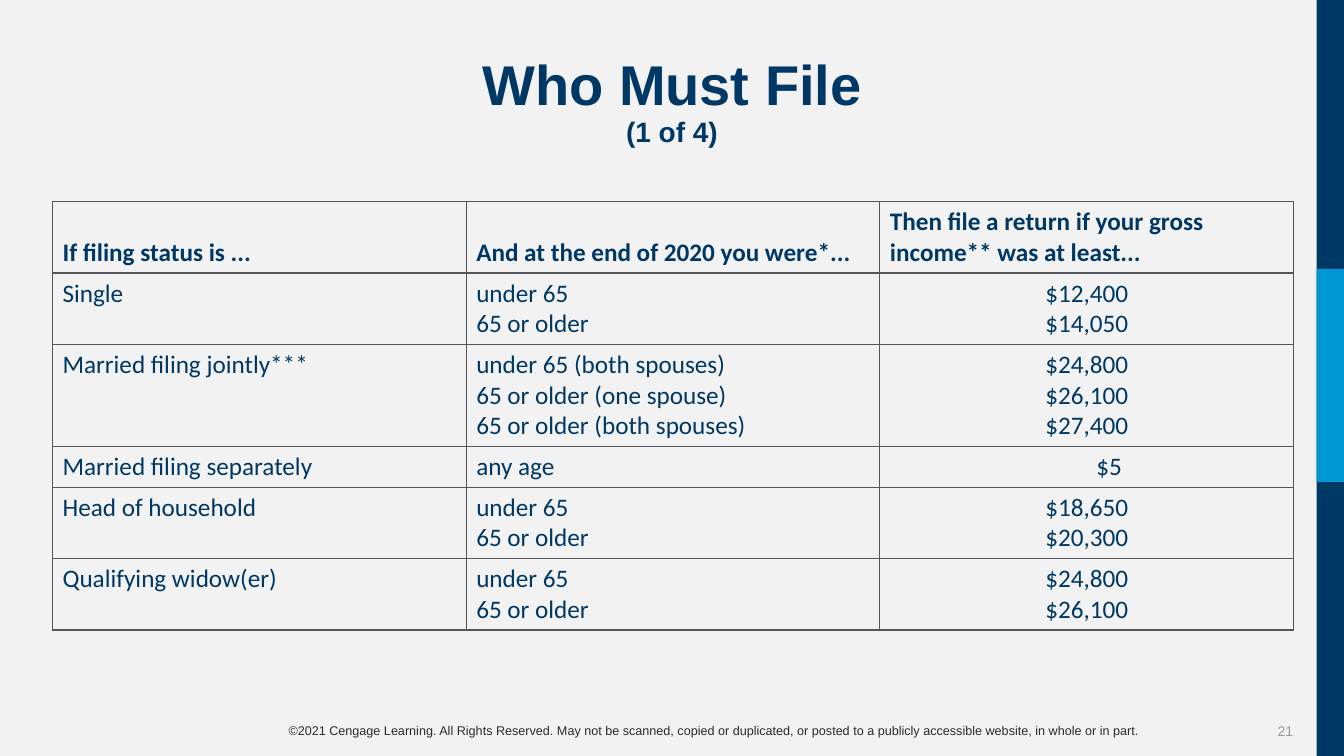
import pptx
import pptx.dml.color
import pptx.enum.shapes
import pptx.enum.text
import pptx.oxml
import pptx.oxml.ns
import pptx.util

RGBColor = pptx.dml.color.RGBColor
ALIGN = pptx.enum.text.PP_ALIGN
ANCHOR = pptx.enum.text.MSO_ANCHOR

NAVY = RGBColor(0x00, 0x38, 0x65)
SKY = RGBColor(0x00, 0x98, 0xD4)
PALE = RGBColor(0xF2, 0xF2, 0xF2)
SLATE = RGBColor(0x53, 0x56, 0x5A)
SILVER = RGBColor(0x96, 0x99, 0x9E)
CHARCOAL = RGBColor(0x2A, 0x2B, 0x2D)

TITLE = "Who Must File"
PART = "(1 of 4)"
COPYRIGHT = (
    "©2021 Cengage Learning. All Rights Reserved. May not be scanned, copied or "
    "duplicated, or posted to a publicly accessible website, in whole or in part."
)
PAGE = "21"
HEADINGS = (
    "If filing status is ...",
    "And at the end of 2020 you were*...",
    "Then file a return if your gross income** was at least...",
)
HEADING_LINES = 2
THRESHOLDS = [
    ("Single", [("under 65", "$12,400"), ("65 or older", "$14,050")]),
    ("Married filing jointly***", [
        ("under 65 (both spouses)", "$24,800"),
        ("65 or older (one spouse)", "$26,100"),
        ("65 or older (both spouses)", "$27,400"),
    ]),
    ("Married filing separately", [("any age", "$5")]),
    ("Head of household", [("under 65", "$18,650"), ("65 or older", "$20,300")]),
    ("Qualifying widow(er)", [("under 65", "$24,800"), ("65 or older", "$26,100")]),
]
INDENTS = {"$5": 43}

# All lengths are px, 96 to the inch
SLIDE_W, SLIDE_H = 1280, 720
BAND_X, BAND_W = 1254, 26
ACCENT_Y, ACCENT_H = 256, 203
TABLE_X, TABLE_Y = 50, 192
COLUMN_W = 394
LINE_H, ROW_PADDING = 29, 10


def px(length):
    return pptx.util.Emu(length * 9525)


def add_run(paragraph, words, font, size, color, bold=False):
    run = paragraph.add_run()
    run.text = words
    run.font.name = font
    run.font.size = pptx.util.Pt(size)
    run.font.color.rgb = color
    run.font.bold = bold


def add_bar(slide, top, height, color):
    bar = slide.shapes.add_shape(
        pptx.enum.shapes.MSO_SHAPE.RECTANGLE, px(BAND_X), px(top), px(BAND_W), px(height))
    bar.shadow.inherit = False
    bar.fill.solid()
    bar.fill.fore_color.rgb = color
    bar.line.fill.background()


def add_note(slide, box, words, size, color, align, anchor):
    frame = slide.shapes.add_textbox(*map(px, box)).text_frame
    frame.word_wrap = True
    frame.vertical_anchor = anchor
    frame.paragraphs[0].alignment = align
    add_run(frame.paragraphs[0], words, "Arial", size, color)


def add_title(slide):
    title = slide.shapes.title
    title.left, title.top, title.width, title.height = map(px, (50, 50, 1180, 128))
    frame = title.text_frame
    frame.auto_size = pptx.enum.text.MSO_AUTO_SIZE.NONE
    frame.vertical_anchor = ANCHOR.TOP
    heading = frame.paragraphs[0]
    heading.alignment = ALIGN.CENTER
    heading.line_spacing = 0.9
    add_run(heading, TITLE, "Arial", 40, NAVY, True)
    heading.add_line_break()
    add_run(heading, PART, "Arial", 20, NAVY, True)


def outline(cell):
    for side in ("lnL", "lnR", "lnT", "lnB"):
        border = pptx.oxml.parse_xml(
            f'<a:{side} {pptx.oxml.ns.nsdecls("a")} w="12700"><a:solidFill>'
            f'<a:srgbClr val="{SLATE}"/></a:solidFill></a:{side}>')
        cell._tc.get_or_add_tcPr().append(border)


def fill_cell(cell, lines, align, bold):
    outline(cell)
    cell.fill.background()
    cell.vertical_anchor = ANCHOR.BOTTOM if bold else ANCHOR.TOP
    frame = cell.text_frame
    for number, line in enumerate(lines):
        paragraph = frame.add_paragraph() if number else frame.paragraphs[0]
        paragraph.alignment = align
        if line in INDENTS:
            paragraph._p.get_or_add_pPr().set("marL", str(px(INDENTS[line])))
        add_run(paragraph, line, "Calibri", 18, NAVY, bold)


def add_thresholds(slide):
    rows = [[[heading] for heading in HEADINGS]]
    rows += [[[status], [age for age, _ in limits], [income for _, income in limits]]
             for status, limits in THRESHOLDS]
    line_counts = [HEADING_LINES] + [len(limits) for _, limits in THRESHOLDS]
    heights = [ROW_PADDING + LINE_H * count for count in line_counts]
    table = slide.shapes.add_table(
        len(rows), len(HEADINGS), px(TABLE_X), px(TABLE_Y),
        px(COLUMN_W * len(HEADINGS)), px(sum(heights))).table
    table.horz_banding = False
    for column in table.columns:
        column.width = px(COLUMN_W)
    for r, (row, height) in enumerate(zip(rows, heights)):
        table.rows[r].height = px(height)
        for c, lines in enumerate(row):
            align = ALIGN.CENTER if r and c == 2 else ALIGN.LEFT
            fill_cell(table.cell(r, c), lines, align, bold=r == 0)


def main():
    deck = pptx.Presentation()
    deck.slide_width, deck.slide_height = px(SLIDE_W), px(SLIDE_H)
    slide = deck.slides.add_slide(deck.slide_layouts.get_by_name("Title Only"))
    slide.background.fill.solid()
    slide.background.fill.fore_color.rgb = PALE
    add_note(slide, (1164, 677, 77, 38), PAGE, 10, SILVER, ALIGN.RIGHT, ANCHOR.MIDDLE)
    add_note(slide, (175, 684, 1009, 24), COPYRIGHT, 9, CHARCOAL, ALIGN.CENTER, ANCHOR.TOP)
    add_bar(slide, 0, SLIDE_H, NAVY)
    add_bar(slide, ACCENT_Y, ACCENT_H, SKY)
    add_title(slide)
    add_thresholds(slide)
    deck.save("out.pptx")


if __name__ == "__main__":
    main()
